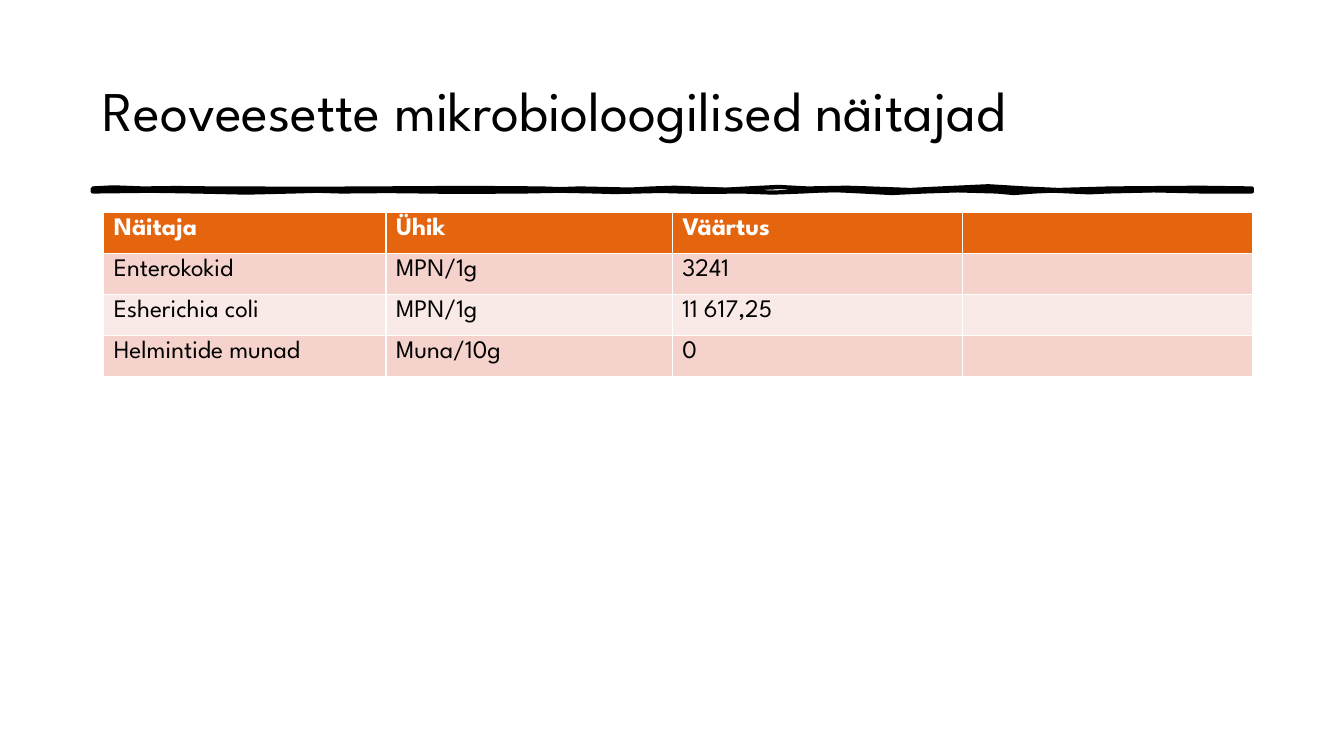
from dataclasses import dataclass

from pptx import Presentation
from pptx.dml.color import RGBColor
from pptx.enum.text import MSO_ANCHOR, PP_ALIGN
from pptx.util import Pt


@dataclass(frozen=True)
class Theme:
    font: str = "League Spartan"
    ink: str = "000000"
    header_text: str = "FFFFFF"
    header_fill: str = "E4650E"
    bands: tuple = ("F5D3CC", "FAEAE7")
    title_size: float = 40
    table_size: float = 18
    rule_width: float = 3


THEME = Theme()

INDICATORS = [
    ("Näitaja", "Ühik", "Väärtus", ""),
    ("Enterokokid", "MPN/1g", "3241", ""),
    ("Esherichia coli", "MPN/1g", "11 617,25", ""),
    ("Helmintide munad", "Muna/10g", "0", ""),
]
COLUMN_WIDTHS = (201.6, 204.5, 207.4, 207.4)
ROW_HEIGHT = 29.25

# Brush strokes: (x, vertical wobble) in points along each edge, left to right
RULE_LEFT, RULE_RIGHT = 66.24, 894.24
RULE_TOP, RULE_BOTTOM = 134.64, 136.8
OUTLINE_TOP = [
    (81, -0.8), (102, 0), (126, -0.3), (153, 0), (226, 0.2), (267, 0),
    (335, -0.4), (387, 0), (400, 0.5), (414, 0), (450, 0.8), (466, 0),
    (482, -0.5), (518, 0.9), (534, 0), (556, -1.1), (577, 0), (605, -0.5),
    (621, 0), (650, 1.1), (672, 0), (706, -1.6), (732, 0), (756, 1.1),
    (793, 0), (857, -0.5),
]
OUTLINE_BOTTOM = [
    (108, -0.5), (140, 0), (176, 0.8), (209, 0), (227, -0.5), (244, 0),
    (277, -0.3), (304, 0), (326, 0.3), (374, 0), (400, -0.5), (426, 0),
    (439, 0.4), (472, -0.4), (486, 0), (504, 0.3), (530, 0), (552, 0.8),
    (573, 0), (594, -1.1), (616, 0), (637, 1.1), (660, 0), (684, -0.8),
    (712, 0), (724, 1.1), (739, 0), (752, -0.6), (778, 0.6), (791, 0),
    (824, -0.8), (859, 0),
]
FILL_TOP = [
    (88, 1.1), (109, 0), (122, -1.1), (136, 0), (155, 0.4), (187, -0.4),
    (204, 0), (227, 0.7), (248, 0), (270, -0.7), (292, 0), (310, 0.7),
    (360, 0), (425, 0.5), (464, 0), (500, -1.1), (532, 0), (558, 1.4),
    (583, 0), (618, -1.1), (652, 0), (716, -0.3), (739, 0), (768, 1.4),
    (798, 0), (821, -1.6), (842, 0), (864, 0.8),
]
FILL_BOTTOM = [
    (94, 0.8), (120, 0), (133, -0.5), (147, 0), (166, -0.3), (182, 0),
    (209, 0.8), (242, 0), (256, -0.8), (269, 0), (295, 0.5), (329, 0),
    (396, 0.5), (424, 0), (443, 0.6), (459, 0), (484, -1.1), (511, 0),
    (526, 0.8), (538, 0), (551, -1.4), (565, 0), (590, 0.8), (616, 0),
    (634, -1.1), (652, 0), (664, 0.8), (691, -0.8), (703, 0), (720, 1),
    (755, -0.2), (772, 0), (788, 0.5), (807, 0), (814, 0.8), (834, 0),
    (850, -0.7), (878, 0.3),
]


def color(value):
    return RGBColor.from_string(value)


def style_runs(paragraph, size, ink, bold=False):
    for run in paragraph.runs:
        run.font.name = THEME.font
        run.font.size = Pt(size)
        run.font.bold = bold
        run.font.color.rgb = color(ink)


def add_brush_stroke(slide, top_edge, bottom_edge):
    top = [(RULE_LEFT, 0), *top_edge, (RULE_RIGHT, 0)]
    bottom = [(RULE_LEFT, 0), *bottom_edge, (RULE_RIGHT, 0)]
    outline = [(Pt(x), Pt(RULE_TOP + wobble)) for x, wobble in top]
    outline += [(Pt(x), Pt(RULE_BOTTOM + wobble)) for x, wobble in reversed(bottom)]
    builder = slide.shapes.build_freeform(*outline[0])
    builder.add_line_segments(outline[1:], close=True)
    stroke = builder.convert_to_shape()
    stroke.shadow.inherit = False
    return stroke


def add_rule(slide):
    outlined = add_brush_stroke(slide, OUTLINE_TOP, OUTLINE_BOTTOM)
    outlined.fill.background()
    outlined.line.color.rgb = color(THEME.ink)
    outlined.line.width = Pt(THEME.rule_width)

    filled = add_brush_stroke(slide, FILL_TOP, FILL_BOTTOM)
    filled.fill.solid()
    filled.fill.fore_color.rgb = color(THEME.ink)
    filled.line.fill.background()


def set_title(slide, text):
    title = slide.shapes.title
    title.left, title.top = Pt(66.24), Pt(28.8)
    title.width, title.height = Pt(828), Pt(104.4)
    frame = title.text_frame
    frame.text = text
    frame.word_wrap = True
    frame.vertical_anchor = MSO_ANCHOR.MIDDLE
    heading = frame.paragraphs[0]
    heading.alignment = PP_ALIGN.LEFT
    heading.line_spacing = 0.9
    style_runs(heading, THEME.title_size, THEME.ink)


def add_indicator_table(slide, rows):
    table = slide.shapes.add_table(
        len(rows), len(COLUMN_WIDTHS), Pt(74.16), Pt(152),
        Pt(sum(COLUMN_WIDTHS)), Pt(ROW_HEIGHT * len(rows))).table
    for column, width in zip(table.columns, COLUMN_WIDTHS):
        column.width = Pt(width)
    for row_index, values in enumerate(rows):
        header = row_index == 0
        fill = THEME.header_fill if header else THEME.bands[(row_index - 1) % 2]
        ink = THEME.header_text if header else THEME.ink
        for column_index, value in enumerate(values):
            cell = table.cell(row_index, column_index)
            cell.fill.solid()
            cell.fill.fore_color.rgb = color(fill)
            if value:
                cell.text_frame.text = value
                style_runs(cell.text_frame.paragraphs[0], THEME.table_size, ink, header)


def main():
    presentation = Presentation()
    presentation.slide_width, presentation.slide_height = Pt(960), Pt(540)
    slide = presentation.slides.add_slide(presentation.slide_layouts[5])

    # Heading with its hand-drawn rule
    set_title(slide, "Reoveesette mikrobioloogilised näitajad")
    add_rule(slide)

    # Microbiological indicators
    add_indicator_table(slide, INDICATORS)

    presentation.save("out.pptx")


if __name__ == "__main__":
    main()
